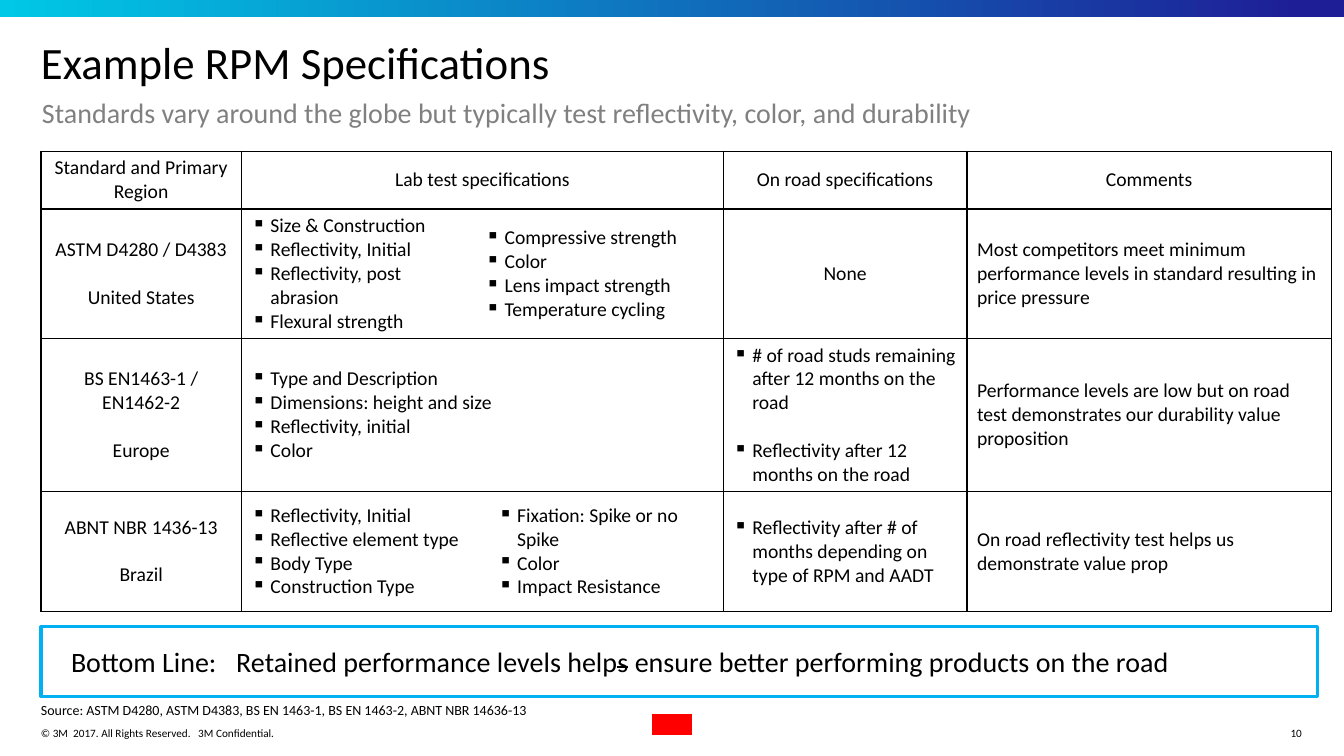
from lxml.etree import SubElement
from pptx import Presentation
from pptx.dml.color import RGBColor
from pptx.enum.shapes import MSO_SHAPE as Shape
from pptx.enum.text import MSO_ANCHOR as Anchor, MSO_AUTO_SIZE as AutoSize, PP_ALIGN as Align
from pptx.oxml.ns import qn
from pptx.util import Emu, Pt

BLACK, GRAY, RED, CYAN = "000000", "808080", "FF0000", "00B0F0"
TITLE_ONLY = 5
COLUMNS = [191, 223, 12, 224, 232, 347]
ROWS = [55, 112, 133, 114]


def px(length):
    return Emu(length * 9525)


def color(code):
    return RGBColor.from_string(code)


class SpecPage:
    font = "Calibri"

    def __init__(self, deck):
        self.page = deck.slides.add_slide(deck.slide_layouts[TITLE_ONLY])
        self.shapes = self.page.shapes

    def style(self, para, size, code=BLACK):
        for span in para.runs:
            span.font.name = self.font
            span.font.size = Pt(size)
            span.font.color.rgb = color(code)

    def fill_frame(self, frame, words, size, code, align, anchor):
        frame.word_wrap = True
        frame.auto_size = AutoSize.NONE
        frame.margin_left = frame.margin_right = frame.margin_top = frame.margin_bottom = 0
        frame.vertical_anchor = anchor
        para = frame.paragraphs[0]
        para.alignment = align
        if isinstance(words, str):
            para.text = words
        else:
            for part in words:
                para.add_run().text = part
        self.style(para, size, code)
        return para

    def title(self, words, left, top, width, height):
        box = self.shapes.title
        box.left, box.top, box.width, box.height = map(px, (left, top, width, height))
        para = self.fill_frame(box.text_frame, words, 32, BLACK, Align.LEFT, Anchor.TOP)
        para.line_spacing = 0.9

    def text(self, words, left, top, width, height, size,
             code=BLACK, align=Align.LEFT, anchor=Anchor.TOP):
        """Add a text box; words is one string or a list of runs."""
        box = self.shapes.add_textbox(*map(px, (left, top, width, height)))
        return self.fill_frame(box.text_frame, words, size, code, align, anchor)

    def rectangle(self, left, top, width, height, fill=None, line=None):
        box = self.shapes.add_shape(Shape.RECTANGLE, *map(px, (left, top, width, height)))
        box.shadow.inherit = False
        if fill:
            box.fill.solid()
            box.fill.fore_color.rgb = color(fill)
        else:
            box.fill.background()
        if line:
            box.line.color.rgb = color(line)
            box.line.width = Pt(2.25)
        else:
            box.line.fill.background()
        return box

    def gradient_bar(self, left, top, width, height, start, end):
        fill = self.rectangle(left, top, width, height).fill
        fill.gradient()
        fill.gradient_angle = 0
        for stop, position, code in zip(fill.gradient_stops, (0, 0.97), (start, end)):
            stop.position = position
            stop.color.rgb = color(code)

    def table(self, left, top, columns, rows):
        frame = self.shapes.add_table(len(rows), len(columns), px(left), px(top),
                                      px(sum(columns)), px(sum(rows)))
        grid = frame.table
        grid.first_row = grid.horz_banding = False
        for column, width in zip(grid.columns, columns):
            column.width = px(width)
        for row, height in zip(grid.rows, rows):
            row.height = px(height)
        return grid

    def cell(self, grid, row, first, last, lines, kind, open_side=""):
        """Fill the cell from column first to last; kind is center, left or bullet."""
        for column in range(first, last + 1):
            part = grid.cell(row, column)
            sides = "TB" + "L" * (column == first) + "R" * (column == last)
            self.borders(part, sides.replace(open_side, "") if open_side else sides)
            part.fill.background()
        cell = grid.cell(row, first)
        if last > first:
            cell.merge(grid.cell(row, last))
        cell.vertical_anchor = Anchor.MIDDLE
        frame = cell.text_frame
        for index, line in enumerate(lines):
            para = frame.paragraphs[0] if index == 0 else frame.add_paragraph()
            para.text = line.lstrip("|")
            para.alignment = Align.CENTER if kind == "center" else Align.LEFT
            if line.startswith("|"):
                para.space_before = Pt(17)
            if kind == "bullet":
                self.bullet(para)
            self.style(para, 14)

    def borders(self, cell, drawn):
        props = cell._tc.get_or_add_tcPr()
        for side in "LRTB":
            line = SubElement(props, qn("a:ln" + side), w=str(Pt(1)))
            if side in drawn:
                fill = SubElement(line, qn("a:solidFill"))
                SubElement(fill, qn("a:srgbClr"), val=BLACK)
            else:
                SubElement(line, qn("a:noFill"))

    def bullet(self, para):
        props = para._p.get_or_add_pPr()
        props.set("marL", str(px(18)))
        props.set("indent", str(-px(18)))
        SubElement(props, qn("a:buChar"), char="▪")


# Row, first column, last column, lines, kind, open side; "|" starts a new block.
CELLS = [
    (0, 0, 0, ["Standard and Primary Region"], "center"),
    (0, 1, 3, ["Lab test specifications"], "center"),
    (0, 4, 4, ["On road specifications"], "center"),
    (0, 5, 5, ["Comments"], "center"),
    (1, 0, 0, ["ASTM D4280 / D4383", "|United States"], "center"),
    (1, 1, 1, ["Size & Construction", "Reflectivity, Initial",
               "Reflectivity, post abrasion", "Flexural strength"], "bullet", "R"),
    (1, 2, 3, ["Compressive strength", "Color", "Lens impact strength",
               "Temperature cycling"], "bullet", "L"),
    (1, 4, 4, ["None"], "center"),
    (1, 5, 5, ["Most competitors meet minimum performance levels in standard "
               "resulting in price pressure"], "left"),
    (2, 0, 0, ["BS EN1463-1 / EN1462-2", "|Europe"], "center"),
    (2, 1, 3, ["Type and Description", "Dimensions: height and size",
               "Reflectivity, initial", "Color"], "bullet"),
    (2, 4, 4, ["# of road studs remaining after 12 months on the road",
               "|Reflectivity after 12 months on the road"], "bullet"),
    (2, 5, 5, ["Performance levels are low but on road test demonstrates "
               "our durability value proposition"], "left"),
    (3, 0, 0, ["ABNT NBR 1436-13", "|Brazil"], "center"),
    (3, 1, 2, ["Reflectivity, Initial", "Reflective element type", "Body Type",
               "Construction Type"], "bullet", "R"),
    (3, 3, 3, ["Fixation: Spike or no Spike", "Color", "Impact Resistance"], "bullet", "L"),
    (3, 4, 4, ["Reflectivity after # of months depending on type of RPM and AADT"], "bullet"),
    (3, 5, 5, ["On road reflectivity test helps us demonstrate value prop"], "left"),
]


def main():
    deck = Presentation()
    deck.slide_width, deck.slide_height = px(1280), px(720)
    page = SpecPage(deck)

    page.gradient_bar(0, 0, 1280, 16, "00C8E6", "1E1E96")
    page.title("Example RPM Specifications", 39, 39, 1199, 48)
    subtitle = page.text("Standards vary around the globe but typically test reflectivity, "
                         "color, and durability", 40, 88, 1200, 38, 20, GRAY)
    subtitle.line_spacing = 1.1

    grid = page.table(39, 144, COLUMNS, ROWS)
    for entry in CELLS:
        page.cell(grid, *entry)

    page.rectangle(39, 597, 1216, 66, line=CYAN)
    page.text("Bottom Line:", 39, 614, 196, 33, 20, align=Align.CENTER)
    message = page.text(["Retained performance levels help", "s",
                         " ensure better performing products on the road"],
                        225, 614, 1026, 33, 20)
    message.runs[1]._r.get_or_add_rPr().set("strike", "sngStrike")

    page.text("Source: ASTM D4280, ASTM D4383, BS EN 1463-1, BS EN 1463-2, ABNT NBR 14636-13",
              39, 668, 756, 16, 10)
    page.text("© 3M  2017. All Rights Reserved.   3M Confidential.",
              39, 687, 252, 23, 8, anchor=Anchor.MIDDLE)
    page.rectangle(621, 680, 38, 20, fill=RED)
    page.text("10", 1217, 692, 23, 12, 8, align=Align.RIGHT)

    deck.save("out.pptx")


if __name__ == "__main__":
    main()
